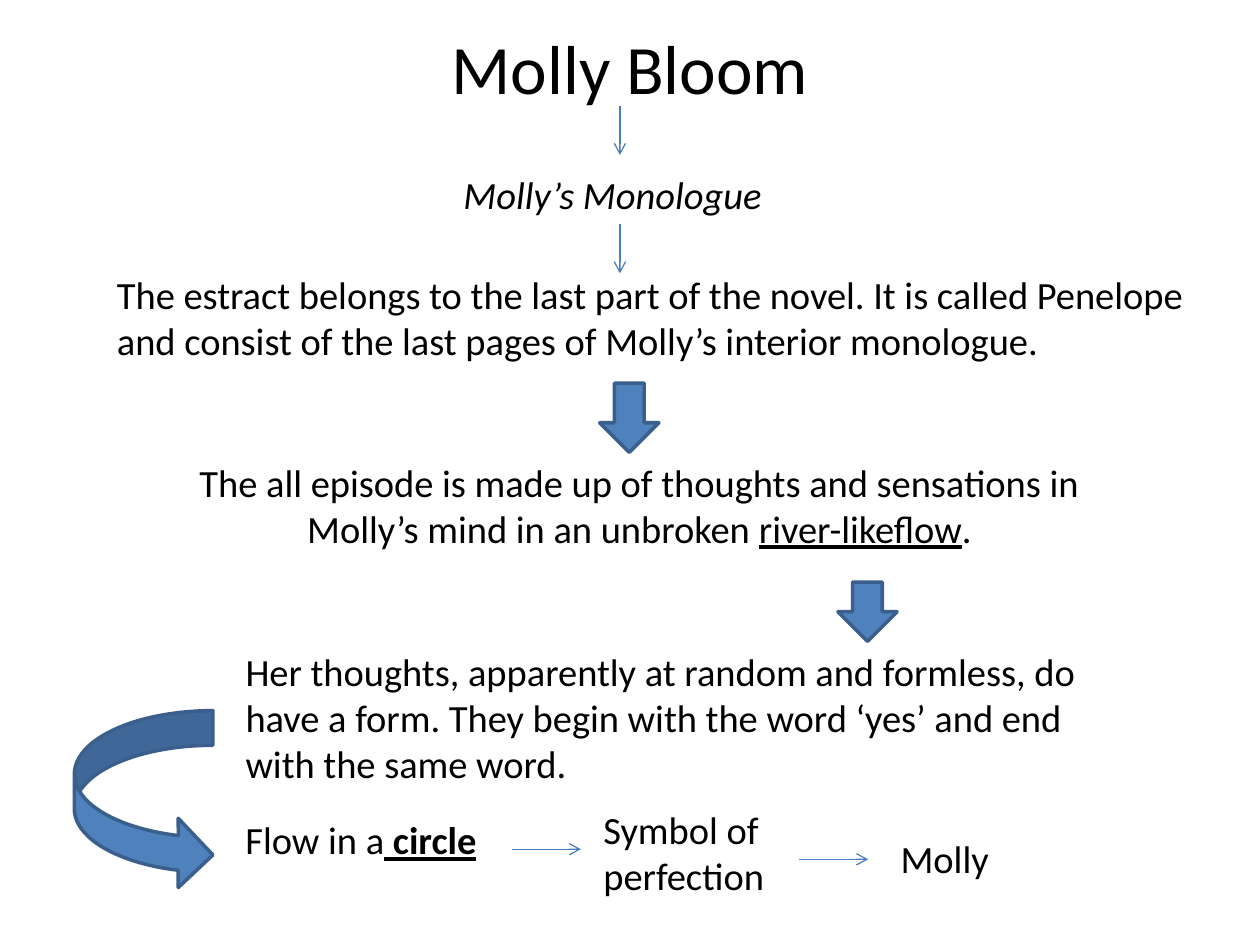
from dataclasses import dataclass

from lxml.etree import SubElement
from pptx import Presentation
from pptx.dml.color import RGBColor
from pptx.enum.shapes import MSO_CONNECTOR, MSO_SHAPE
from pptx.enum.text import MSO_ANCHOR, PP_ALIGN
from pptx.oxml.ns import qn
from pptx.util import Inches, Pt


@dataclass(frozen=True)
class Theme:
    font: str = "Calibri"
    text: RGBColor = RGBColor(0, 0, 0)
    arrow_fill: RGBColor = RGBColor(0x4F, 0x81, 0xBD)
    arrow_edge: RGBColor = RGBColor(0x3A, 0x5F, 0x8C)
    connector: RGBColor = RGBColor(0x4B, 0x7E, 0xBC)
    title_size: float = 39.6
    body_size: float = 22
    edge_width: float = 2
    connector_width: float = 0.75


THEME = Theme()


def write(shape, *runs, size=THEME.body_size, align=PP_ALIGN.LEFT,
          anchor=MSO_ANCHOR.TOP):
    """Fill the shape with one paragraph; a run is (text, set of styles)."""
    frame = shape.text_frame
    frame.word_wrap = True
    frame.vertical_anchor = anchor
    paragraph = frame.paragraphs[0]
    paragraph.alignment = align
    for text, styles in runs:
        run = paragraph.add_run()
        run.text = text
        font = run.font
        font.name, font.size = THEME.font, Pt(size)
        font.color.rgb = THEME.text
        for style in styles:
            setattr(font, style, True)


def add_text(slide, left, top, width, height, *runs, **format):
    box = slide.shapes.add_textbox(
        Inches(left), Inches(top), Inches(width), Inches(height))
    write(box, *runs, **format)


def add_block_arrow(slide, kind, left, top, width, height):
    arrow = slide.shapes.add_shape(
        kind, Inches(left), Inches(top), Inches(width), Inches(height))
    arrow.shadow.inherit = False
    arrow.fill.solid()
    arrow.fill.fore_color.rgb = THEME.arrow_fill
    arrow.line.color.rgb = THEME.arrow_edge
    arrow.line.width = Pt(THEME.edge_width)


def add_thin_arrow(slide, left, top, across=0, down=0):
    connector = slide.shapes.add_connector(
        MSO_CONNECTOR.STRAIGHT, Inches(left), Inches(top),
        Inches(left + across), Inches(top + down))
    connector.line.color.rgb = THEME.connector
    connector.line.width = Pt(THEME.connector_width)
    SubElement(connector.line._get_or_add_ln(), qn("a:tailEnd"), type="arrow")
    SubElement(connector._element.spPr, qn("a:effectLst"))


def place_title(slide, left, top, width, height):
    title = slide.shapes.title
    title.left, title.top = Inches(left), Inches(top)
    title.width, title.height = Inches(width), Inches(height)
    write(title, ("Molly Bloom", ()), size=THEME.title_size,
          align=PP_ALIGN.CENTER, anchor=MSO_ANCHOR.MIDDLE)


def add_monologue(slide, left, top, width):
    """Subtitle and the extract's description, each under a thin arrow."""
    arrow_left = left + 4.09
    add_thin_arrow(slide, arrow_left, top, down=0.39)
    add_text(slide, left + 2.75, top + 0.47, 2.91, 0.47,
             ("Molly’s Monologue", {"italic"}))
    add_thin_arrow(slide, arrow_left, top + 0.94, down=0.39)
    add_text(slide, left, top + 1.26, width, 1.14,
             ("The estract belongs to the last part of the novel. It is called "
              "Penelope and consist of the last pages of Molly’s interior "
              "monologue.", ()))


def add_episode(slide, left, top, width):
    """Centred statement between two block arrows."""
    add_block_arrow(slide, MSO_SHAPE.DOWN_ARROW, left + 3.7, top, 0.47, 0.55)
    add_text(slide, left, top + 0.55, width, 0.86,
             ("The all episode is made up of thoughts and sensations in "
              "Molly’s mind in an unbroken ", ()),
             ("river-likeflow", {"underline"}), (".", ()),
             align=PP_ALIGN.CENTER)
    add_block_arrow(slide, MSO_SHAPE.DOWN_ARROW,
                    left + 5.59, top + 1.58, 0.47, 0.47)


def add_form(slide, left, top, width):
    """Thoughts that curve round into the circle, then lead to Molly."""
    text_left = left + 1.26
    add_text(slide, text_left, top, width - 1.26, 1.21,
             ("Her thoughts, apparently at random and formless, do have a "
              "form. They begin with the word ‘yes’ and end with the same "
              "word.", ()))
    add_block_arrow(slide, MSO_SHAPE.CURVED_RIGHT_ARROW,
                    left, top + 0.55, 1.1, 1.42)
    add_text(slide, text_left, top + 1.34, 2.13, 0.47,
             ("Flow in a", ()), (" circle", {"bold", "underline"}))
    add_thin_arrow(slide, left + 3.47, top + 1.65, across=0.55)
    add_text(slide, left + 4.1, top + 1.26, 1.65, 0.84,
             ("Symbol of perfection", ()))
    add_thin_arrow(slide, left + 5.75, top + 1.73, across=0.55)
    add_text(slide, left + 6.46, top + 1.49, 1.1, 0.47, ("Molly", ()))


def main():
    presentation = Presentation()
    presentation.slide_width = Inches(10)
    presentation.slide_height = Inches(7.5)
    slide = presentation.slides.add_slide(presentation.slide_layouts[5])
    place_title(slide, 0.5, 0.3, 9, 0.46)
    add_monologue(slide, 0.83, 0.84, 8.74)
    add_episode(slide, 1.06, 3.04, 8.03)
    add_form(slide, 0.59, 5.09, 8.35)
    presentation.save("out.pptx")


if __name__ == "__main__":
    main()
